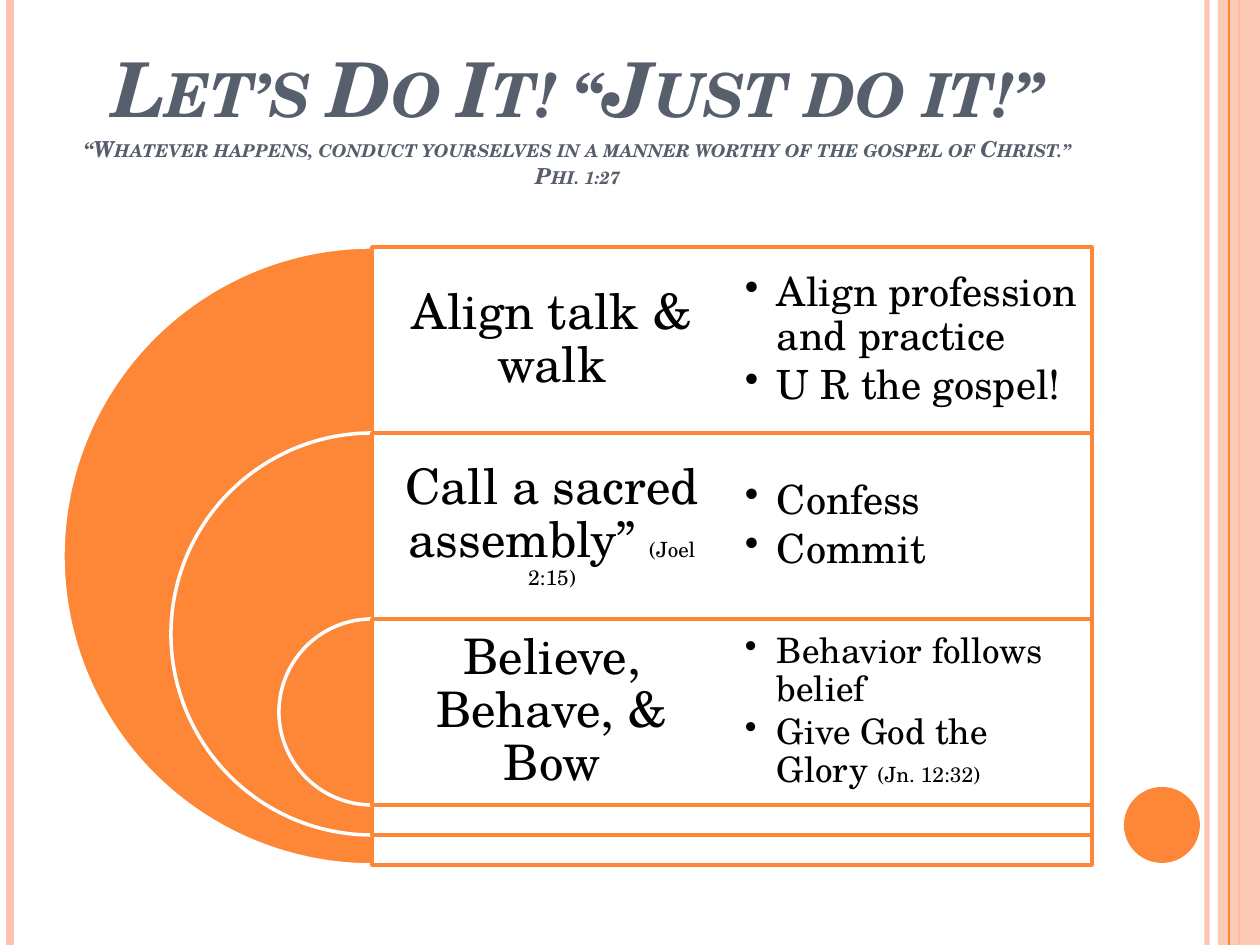
from collections import namedtuple

from lxml import etree
from pptx import Presentation
from pptx.dml.color import RGBColor
from pptx.enum.shapes import MSO_CONNECTOR, MSO_SHAPE
from pptx.enum.text import MSO_ANCHOR, PP_ALIGN
from pptx.oxml.ns import qn
from pptx.util import Emu, Pt

STRAIGHT = MSO_CONNECTOR.STRAIGHT
RECTANGLE, OVAL, PIE = MSO_SHAPE.RECTANGLE, MSO_SHAPE.OVAL, MSO_SHAPE.PIE
MIDDLE, BOTTOM = MSO_ANCHOR.MIDDLE, MSO_ANCHOR.BOTTOM
CENTER, LEFT = PP_ALIGN.CENTER, PP_ALIGN.LEFT

ORANGE = RGBColor(0xFE, 0x86, 0x37)
PEACH = RGBColor(0xFE, 0xC3, 0xAE)
SLATE = RGBColor(0x57, 0x5F, 0x6D)
WHITE = RGBColor(0xFF, 0xFF, 0xFF)
BLACK = RGBColor(0x00, 0x00, 0x00)
FONT = "TeX Gyre Schola"

PAGE_WIDTH, PAGE_HEIGHT = 1260, 945
EMU_PER_PX = 914400 / 126

Box = namedtuple("Box", "left top width height")
Topic = namedtuple("Topic", "heading bullets bullet_size")

TITLE = [
    ("Let’s Do It! “Just do it!”", 43.2),
    ("\n", 43.2),
    ("“", 14.4),
    ("Whatever happens, conduct yourselves in a manner worthy "
     "of the gospel of Christ.” Phi. 1:27", 12.6),
]
TOPICS = [
    Topic([("Align talk & walk", 28)],
          [[("Align profession and practice", 23)], [("U R the gospel!", 23)]], 23),
    Topic([("Call a sacred assembly” ", 28), ("(Joel 2:15)", 12)],
          [[("Confess", 23)], [("Commit", 23)]], 23),
    Topic([("Believe, Behave, & Bow", 28)],
          [[("Behavior follows belief", 20)],
           [("Give God the Glory ", 20), ("(Jn. 12:32)", 12)]], 20),
]


def px(length):
    return Emu(round(length * EMU_PER_PX))


def set_opacity(fill, percent):
    color = fill._xPr.find(qn("a:solidFill"))[0]
    etree.SubElement(color, qn("a:alpha")).set("val", str(percent * 1000))


def add_block(page, kind, box, fill, opacity=100, line=None):
    block = page.shapes.add_shape(kind, *map(px, box))
    block.shadow.inherit = False
    block.fill.solid()
    block.fill.fore_color.rgb = fill
    if opacity < 100:
        set_opacity(block.fill, opacity)
    if line is None:
        block.line.fill.background()
    else:
        block.line.color.rgb = line
        block.line.width = Pt(2)
    return block


def add_stripe(page, x, color, weight, opacity=100):
    stripe = page.shapes.add_connector(STRAIGHT, px(x), 0, px(x), px(PAGE_HEIGHT))
    stripe.line.color.rgb = color
    stripe.line.width = Pt(weight)
    if opacity < 100:
        set_opacity(stripe.line.fill, opacity)
    etree.SubElement(stripe._element.spPr, qn("a:effectLst"))


def add_bullet(para, size, indent):
    properties = para._p.get_or_add_pPr()
    properties.set("marL", str(px(indent)))
    properties.set("indent", str(-px(indent)))
    etree.SubElement(properties, qn("a:buSzPts")).set("val", str(size * 100))
    etree.SubElement(properties, qn("a:buChar")).set("char", "•")


def add_text(page, box, paragraphs, *, color=BLACK, align=CENTER, anchor=MIDDLE,
             margins=(13, 6), spacing=None, after=0, bullet_size=None,
             emphasis=False, small_caps=False):
    frame = page.shapes.add_textbox(*map(px, box)).text_frame
    frame.word_wrap = True
    frame.vertical_anchor = anchor
    frame.margin_left = frame.margin_right = px(margins[0])
    frame.margin_top = frame.margin_bottom = px(margins[1])
    for index, spans in enumerate(paragraphs):
        para = frame.add_paragraph() if index else frame.paragraphs[0]
        para.alignment = align
        para.space_after = Pt(after)
        if spacing:
            para.line_spacing = spacing
        if bullet_size:
            add_bullet(para, bullet_size, 32)
        for text, size in spans:
            if text == "\n":
                para.add_line_break()
                continue
            span = para.add_run()
            span.text = text
            span.font.name = FONT
            span.font.size = Pt(size)
            span.font.color.rgb = color
            span.font.bold = span.font.italic = emphasis
            if small_caps:
                span.font._element.set("cap", "small")


def draw_frame(page, box):
    right = box.left + box.width
    add_stripe(page, right - 53, PEACH, 3, opacity=93)
    add_stripe(page, box.left + 10, PEACH, 4.5)
    add_stripe(page, right - 21, ORANGE, 1.5)
    add_block(page, RECTANGLE, Box(right - 42, box.top, 42, box.height), PEACH, opacity=87)
    add_stripe(page, right - 31, ORANGE, 0.75)
    add_block(page, OVAL, Box(right - 136, box.top + 787, 76, 76), ORANGE)


def draw_title(page, box):
    add_text(page, box, [TITLE], color=SLATE, anchor=BOTTOM, emphasis=True, small_caps=True)


def draw_targets(page, box, topics, step=30):
    count = len(topics)
    band = (box.height - step * (count - 1)) // count
    center = box.left + box.height // 2
    panel_width = box.left + box.width - center
    column = panel_width // 2
    for index, topic in enumerate(topics):
        top = box.top + index * band
        size = box.height - index * (band + step)
        target = add_block(page, PIE, Box(center - size / 2, top, size, size),
                           ORANGE, line=WHITE)
        target.adjustments[0] = 54
        target.adjustments[1] = 162
        add_block(page, RECTANGLE, Box(center, top, panel_width, size),
                  WHITE, opacity=90, line=ORANGE)
        add_text(page, Box(center, top, column, band), [topic.heading],
                 margins=(15, 15), spacing=0.9)
        add_text(page, Box(center + column, top, column, band), topic.bullets,
                 align=LEFT, margins=(13, 13), spacing=0.9, after=3,
                 bullet_size=topic.bullet_size)


def main():
    deck = Presentation()
    deck.slide_width, deck.slide_height = px(PAGE_WIDTH), px(PAGE_HEIGHT)
    page = deck.slides.add_slide(deck.slide_layouts[6])
    draw_frame(page, Box(0, 0, PAGE_WIDTH, PAGE_HEIGHT))
    draw_title(page, Box(63, 38, 1029, 157))
    draw_targets(page, Box(63, 247, 1029, 618), TOPICS)
    deck.save("out.pptx")


if __name__ == "__main__":
    main()
